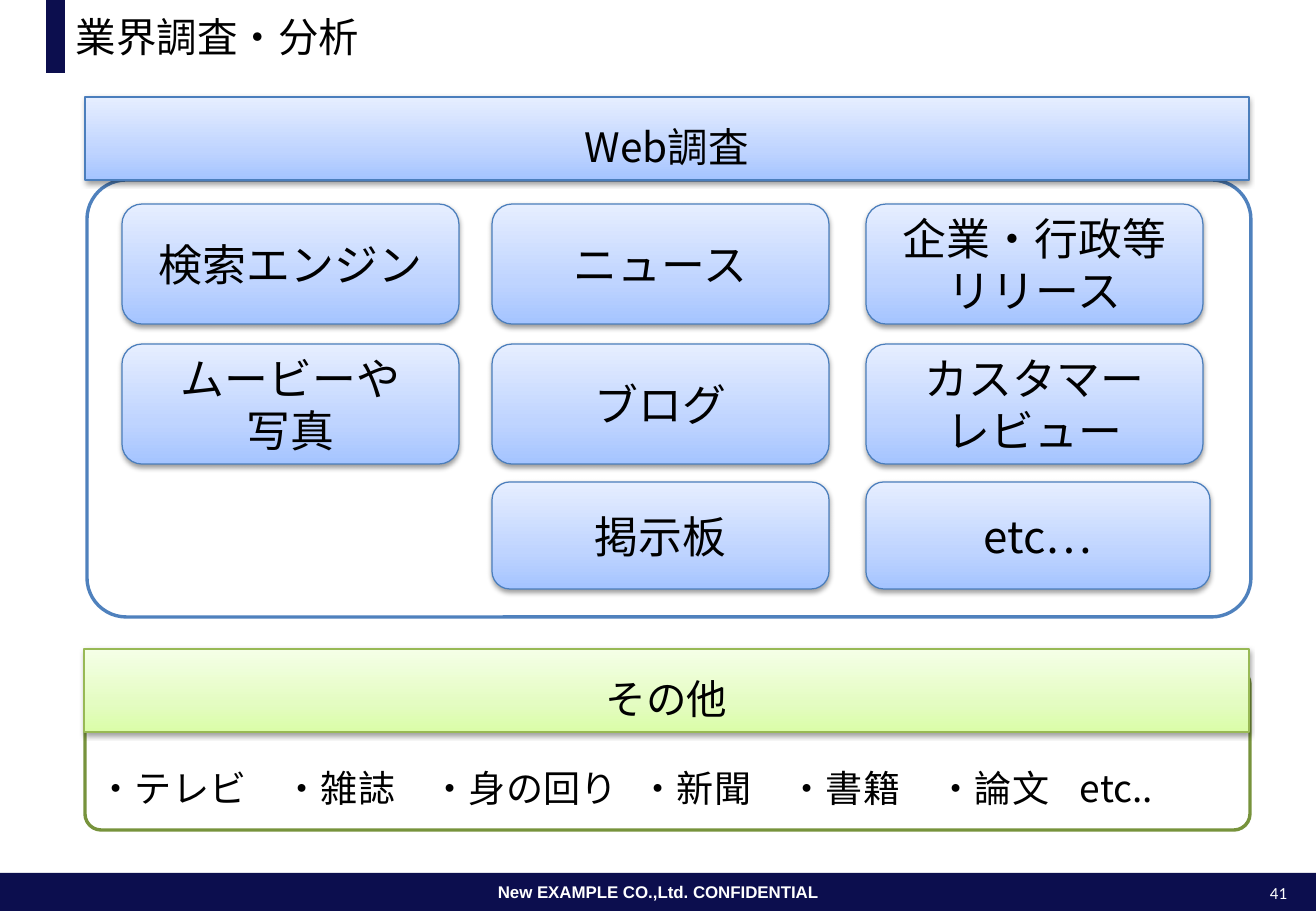
from lxml import etree
from pptx import Presentation
from pptx.dml.color import RGBColor
from pptx.enum.shapes import MSO_SHAPE
from pptx.enum.text import MSO_ANCHOR, PP_ALIGN
from pptx.oxml import parse_xml
from pptx.oxml.ns import nsdecls, qn
from pptx.util import Pt

RECT, ROUND = MSO_SHAPE.RECTANGLE, MSO_SHAPE.ROUNDED_RECTANGLE
LEFT, CENTER, RIGHT = PP_ALIGN.LEFT, PP_ALIGN.CENTER, PP_ALIGN.RIGHT
MIDDLE = MSO_ANCHOR.MIDDLE
PX = 7526
JAPANESE = "Noto Sans CJK JP"
COLORS = {
    "navy": "0C0E4E", "white": "FFFFFF", "black": "000000",
    "blue_frame": "4F81BD", "blue_edge": "4B7EBC",
    "green_frame": "77933C", "green_edge": "98B955",
}
GRADIENTS = {
    "blue": ("A4C4FF", "BFD4FF", "E6EEFF"),
    "green": ("DAFDA7", "E4FCC2", "F5FFE7"),
}
STOPS = (0, 35, 100)
TILE_COLUMNS = (35, 405, 779)
TILE_ROWS = ((24, 120), (164, 120), (302, 107))
TILE_WIDTH, LAST_TILE_WIDTH = 337, 344
TOPICS = (
    ("検索エンジン", "ニュース", "企業・行政等\nリリース"),
    ("ムービーや\n写真", "ブログ", "カスタマー\nレビュー"),
    (None, "掲示板", "etc…"),
)
OTHER_SOURCES = ("・テレビ", "・雑誌", "・身の回り", "・新聞", "・書籍", "・論文", "etc..")
SOURCE_TABS = (186, 334, 542, 691, 840, 982)


def rgb(name):
    """Return the palette colour with this name."""
    return RGBColor.from_string(COLORS[name])


def emu(box):
    """Turn a px box into EMU lengths."""
    return [length * PX for length in box]


def write(holder, text, size=24, color="black", font=JAPANESE, bold=False,
          align=CENTER, spacing=None, inset=(12, 6), wrap=True, tabs=()):
    """Fill a shape with formatted text, one paragraph per line."""
    frame = holder.text_frame
    frame.word_wrap = wrap
    frame.vertical_anchor = MIDDLE
    frame.margin_left = frame.margin_right = inset[0] * PX
    frame.margin_top = frame.margin_bottom = inset[1] * PX
    for index, line in enumerate(text.split("\n")):
        paragraph = frame.add_paragraph() if index else frame.paragraphs[0]
        paragraph.alignment = align
        if spacing:
            paragraph.line_spacing = spacing
        if tabs:
            stops = etree.SubElement(paragraph._p.get_or_add_pPr(), qn("a:tabLst"))
            for tab in tabs:
                etree.SubElement(stops, qn("a:tab"), pos=str(tab * PX), algn="l")
        run = paragraph.add_run()
        run.text = line
        run.font.size = Pt(size)
        run.font.bold = bold
        run.font.name = font
        run.font.color.rgb = rgb(color)
        etree.SubElement(run._r.get_or_add_rPr(), qn("a:ea"), typeface=font)


def add_flat(slide, box, fill, kind=RECT, edge=None, radius=None):
    """Add a plain filled shape, outlined when an edge colour is given."""
    flat = slide.shapes.add_shape(kind, *emu(box))
    flat.shadow.inherit = False
    flat.fill.solid()
    flat.fill.fore_color.rgb = rgb(fill)
    if edge:
        flat.line.color.rgb = rgb(edge)
        flat.line.width = Pt(2)
    else:
        flat.line.fill.background()
    if radius:
        flat.adjustments[0] = radius
    return flat


def add_glossy(slide, box, theme, kind=RECT):
    """Add a shape with an upward gradient and a soft shadow."""
    glossy = slide.shapes.add_shape(kind, *emu(box))
    glossy.line.color.rgb = rgb(theme + "_edge")
    glossy.line.width = Pt(0.75)
    glossy.shadow.inherit = False
    stops = "".join(
        f'<a:gs pos="{stop * 1000}"><a:srgbClr val="{color}"/></a:gs>'
        for stop, color in zip(STOPS, GRADIENTS[theme]))
    properties = glossy._element.spPr
    properties.find(qn("a:prstGeom")).addnext(parse_xml(
        f'<a:gradFill {nsdecls("a")} rotWithShape="1"><a:gsLst>{stops}</a:gsLst>'
        '<a:lin ang="16200000" scaled="0"/></a:gradFill>'))
    properties.find(qn("a:effectLst")).append(parse_xml(
        f'<a:outerShdw {nsdecls("a")} blurRad="40000" dist="20000" dir="5400000" '
        'rotWithShape="0"><a:srgbClr val="000000"><a:alpha val="38000"/>'
        '</a:srgbClr></a:outerShdw>'))
    return glossy


def add_footer(slide, box):
    """Draw the footer band with its notice and page number."""
    left, top, width, height = box
    band = add_flat(slide, box, "navy")
    write(band, "New EXAMPLE CO.,Ltd. CONFIDENTIAL", size=10, color="white",
          font="Arial", bold=True, wrap=False)
    page = slide.shapes.add_textbox(*emu((left + width - 67, top + 3, 50, height - 5)))
    write(page, "41", size=10, color="white", font="Calibri", align=RIGHT)


def add_title(slide, box):
    """Draw the title with its accent bar."""
    left, top, width, height = box
    add_flat(slide, (left, top, 19, height), "navy")
    title = slide.shapes.add_textbox(*emu((left + 18, top, width - 18, height)))
    write(title, "業界調査・分析", align=LEFT)


def add_header(slide, box, text, theme):
    """Draw the heading bar of a section."""
    write(add_glossy(slide, box, theme), text, spacing=1.3, inset=(15, 10))


def add_web_section(slide, box):
    """Draw the web research section with its grid of topics."""
    left, top, width, height = box
    frame_left, frame_top = left + 2, top + 83
    add_flat(slide, (frame_left, frame_top, width, height - 83), "white",
             kind=ROUND, edge="blue_frame", radius=0.09)
    add_header(slide, (left, top, width, 83), "Web調査", "blue")
    for (row_top, row_height), topics in zip(TILE_ROWS, TOPICS):
        for column, topic in zip(TILE_COLUMNS, topics):
            if topic:
                tile_width = LAST_TILE_WIDTH if topic == "etc…" else TILE_WIDTH
                tile = add_glossy(slide, (frame_left + column, frame_top + row_top,
                                          tile_width, row_height), "blue", ROUND)
                write(tile, topic, size=26)


def add_other_section(slide, box):
    """Draw the section listing the other sources."""
    left, top, width, height = box
    add_flat(slide, (left + 1, top + 19, width, height - 19), "white",
             kind=ROUND, edge="green_frame", radius=0.1)
    add_header(slide, (left, top, width, 83), "その他", "green")
    sources = slide.shapes.add_textbox(*emu((left - 1, top + 93, width + 1, 78)))
    write(sources, "\t".join(OTHER_SOURCES), size=22, align=LEFT, spacing=1.3,
          inset=(15, 10), tabs=SOURCE_TABS)


def main():
    """Build the slide and save it."""
    deck = Presentation()
    deck.slide_width, deck.slide_height = emu((1316, 911))
    slide = deck.slides.add_slide(deck.slide_layouts[6])
    add_footer(slide, (0, 873, 1316, 38))
    add_title(slide, (46, 0, 1253, 73))
    add_web_section(slide, (85, 97, 1164, 520))
    add_other_section(slide, (84, 649, 1165, 181))
    deck.save("out.pptx")


if __name__ == "__main__":
    main()
